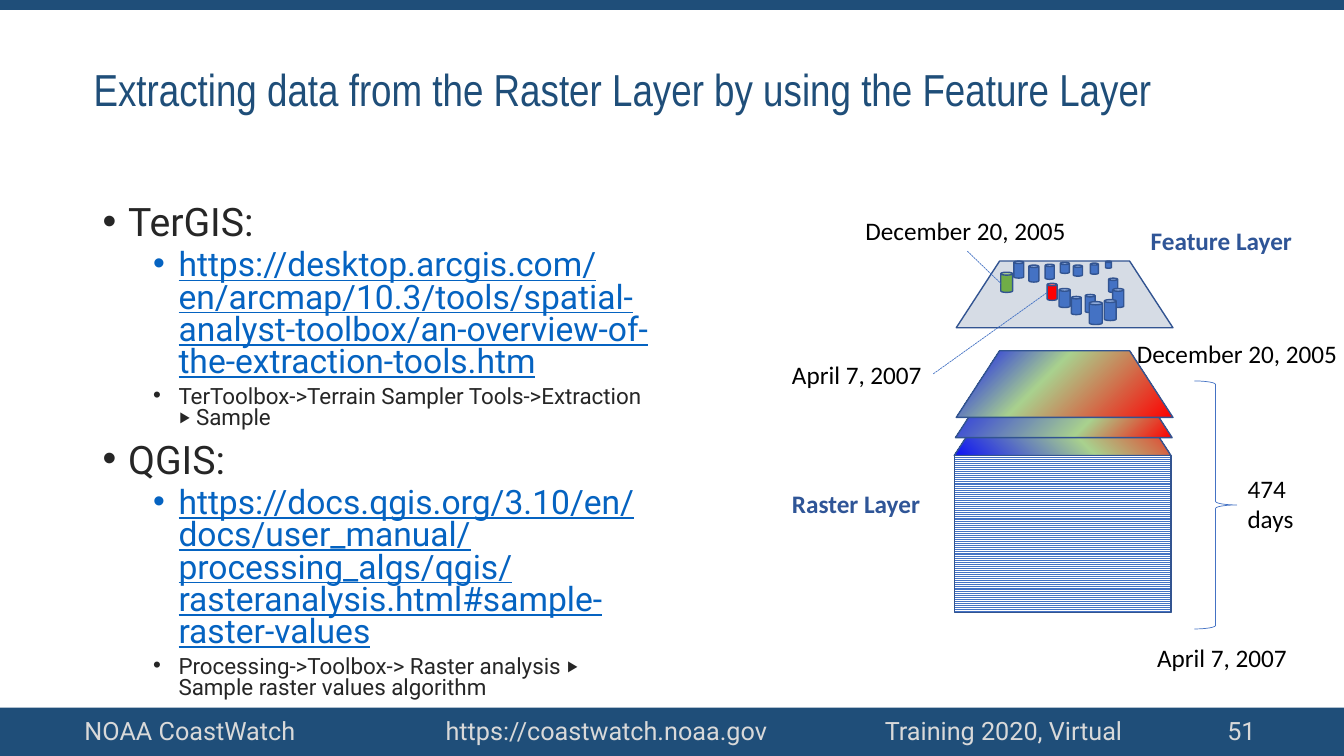
from lxml.etree import SubElement
from pptx import Presentation
from pptx.dml.color import RGBColor
from pptx.enum.dml import MSO_LINE, MSO_PATTERN
from pptx.enum.shapes import MSO_CONNECTOR, MSO_SHAPE
from pptx.enum.text import MSO_ANCHOR, MSO_AUTO_SIZE
from pptx.oxml import parse_xml
from pptx.oxml.ns import nsdecls, qn
from pptx.util import Cm, Pt

COLORS = {
    "navy": "1F4E79", "footer": "D9D9D9", "text": "262626", "link": "0563C1",
    "black": "000000", "white": "FFFFFF", "caption": "2F5597", "edge": "325491",
    "blue": "4472C4", "green": "70AD47", "red": "FF0000", "sheet": "D6DCE5",
    "deep": "0C12F6", "pale": "A9D18E",
}
SHEET_W, SHEET_H = 5.46, 1.68

# left, top, width, height inside the feature sheet, in cm
STATIONS = [
    (1.45, 0, 0.25, 0.43, "blue"), (1.12, 0.28, 0.3, 0.51, "green"),
    (1.83, 0.1, 0.25, 0.43, "blue"), (2.24, 0.08, 0.23, 0.38, "blue"),
    (2.62, 0.03, 0.23, 0.28, "blue"), (2.95, 0.1, 0.23, 0.28, "blue"),
    (3.38, 0.05, 0.2, 0.28, "blue"), (3.84, 0.43, 0.23, 0.36, "blue"),
    (3.76, 0, 0.15, 0.18, "blue"), (3.94, 0.69, 0.28, 0.48, "blue"),
    (3.73, 0.97, 0.3, 0.53, "blue"), (3.25, 0.84, 0.25, 0.46, "blue"),
    (2.9, 0.89, 0.25, 0.46, "blue"), (2.59, 0.69, 0.28, 0.48, "blue"),
    (2.29, 0.56, 0.25, 0.43, "red"), (3.35, 1.02, 0.33, 0.58, "blue"),
]
# left, top, middle stop in %, focus rectangle; from the back to the front
RASTERS = [
    (0, 0.96, 50, {"t": "100000", "r": "100000"}),
    (0.03, 0.51, 65, {"r": "100000", "b": "100000"}),
    (0.05, 0, 41, {"r": "100000", "b": "100000"}),
]
# level, size, colour, text
OUTLINE = [
    (0, 28, "text", "TerGIS:"),
    (1, 24, "link", "https://desktop.arcgis.com/en/arcmap/10.3/tools/spatial-analyst-toolbox/"
                    "an-overview-of-the-extraction-tools.htm"),
    (1, 16, "text", "TerToolbox->Terrain Sampler Tools->Extraction ‣ Sample"),
    (0, 28, "text", "QGIS:"),
    (1, 24, "link", "https://docs.qgis.org/3.10/en/docs/user_manual/processing_algs/qgis/"
                    "rasteranalysis.html#sample-raster-values"),
    (1, 16, "text", "Processing->Toolbox-> Raster analysis ‣ Sample raster values algorithm"),
]


def rgb(name):
    return RGBColor.from_string(COLORS[name])


def add_run(p, text, size, font, color, bold=False, underline=False):
    r = p.add_run()
    r.text = text
    r.font.size, r.font.name = Pt(size), font
    r.font.bold, r.font.underline = bold, underline
    r.font.color.rgb = rgb(color)


def add_shape(shapes, kind, x, y, w, h, fill=None, line=None, weight=1):
    sp = shapes.add_shape(kind, Cm(x), Cm(y), Cm(w), Cm(h))
    sp.shadow.inherit = False
    if fill:
        sp.fill.solid()
        sp.fill.fore_color.rgb = rgb(fill)
    else:
        sp.fill.background()
    if line:
        sp.line.color.rgb = rgb(line)
        sp.line.width = Pt(weight)
    else:
        sp.line.fill.background()
    return sp


def flip(sp, axis):
    sp.element.spPr.find(qn("a:xfrm")).set(axis, "1")


def add_sheet(shapes, x, y, fill):
    """A trapezoid that is narrow at the top."""
    sp = add_shape(shapes, MSO_SHAPE.FLOWCHART_MANUAL_OPERATION,
                   x, y, SHEET_W, SHEET_H, fill, "edge")
    flip(sp, "flipV")
    return sp


def fill_radial(sp, middle, focus):
    """Blue to green to red, spreading from the focus corner."""
    grad = parse_xml(f'<a:gradFill {nsdecls("a")} rotWithShape="1"/>')
    stops = SubElement(grad, qn("a:gsLst"))
    for pos, color in ((0, "deep"), (middle, "pale"), (100, "red")):
        gs = SubElement(stops, qn("a:gs"), pos=str(pos * 1000))
        SubElement(gs, qn("a:srgbClr"), val=COLORS[color])
    circle = SubElement(grad, qn("a:path"), path="circle")
    SubElement(circle, qn("a:fillToRect"), **focus)
    old = sp.element.spPr.find(qn("a:solidFill"))
    sp.element.spPr.replace(old, grad)


def add_label(s, x, y, w, text, color="black", bold=False, h=1.02, wrap=False):
    tb = s.shapes.add_textbox(Cm(x), Cm(y), Cm(w), Cm(h))
    tf = tb.text_frame
    tf.word_wrap = wrap
    tf.auto_size = MSO_AUTO_SIZE.SHAPE_TO_FIT_TEXT
    add_run(tf.paragraphs[0], text, 18, "Calibri", color, bold)


def add_leader(s, x1, y1, x2, y2):
    cn = s.shapes.add_connector(MSO_CONNECTOR.STRAIGHT, Cm(x1), Cm(y1), Cm(x2), Cm(y2))
    cn.line.color.rgb = rgb("blue")
    cn.line.width = Pt(0.5)
    cn.line.dash_style = MSO_LINE.SQUARE_DOT
    SubElement(cn.element.spPr, qn("a:effectLst"))


def add_footer(s, x, y, w, h):
    sp = add_shape(s.shapes, MSO_SHAPE.RECTANGLE, x, y, w, h, "navy")
    tf = sp.text_frame
    tf.margin_left = Cm(2.13)
    tf.vertical_anchor = MSO_ANCHOR.MIDDLE
    p = tf.paragraphs[0]
    p.line_spacing = 0.93
    pPr = p._p.get_or_add_pPr()
    pPr.set("algn", "l")
    tabs = SubElement(pPr, qn("a:tabLst"))
    for stop in (9.1, 20.17, 28.8):
        SubElement(tabs, qn("a:tab"), pos=str(Cm(stop)), algn="l")
    items = ("NOAA CoastWatch", "https://coastwatch.noaa.gov", "Training 2020, Virtual", "51")
    add_run(p, "\t".join(items), 18, "Roboto", "footer")


def add_title(s, x, y, w, h):
    tf = s.shapes.add_textbox(Cm(x), Cm(y), Cm(w), Cm(h)).text_frame
    tf.word_wrap = True
    tf.vertical_anchor = MSO_ANCHOR.MIDDLE
    p = tf.paragraphs[0]
    p.line_spacing = 0.9
    add_run(p, "Extracting data from the Raster Layer by using the Feature Layer",
            32, "Arial Narrow", "navy")


def add_outline(s, x, y, w, h):
    tf = s.shapes.add_textbox(Cm(x), Cm(y), Cm(w), Cm(h)).text_frame
    tf.word_wrap = True
    for i, (level, size, color, text) in enumerate(OUTLINE):
        p = tf.add_paragraph() if i else tf.paragraphs[0]
        p.level = level
        p.line_spacing = 0.8
        if i:
            p.space_before = Pt(5 if level else 10)
        pPr = p._p.get_or_add_pPr()
        pPr.set("marL", str(Cm(1.91 if level else 0.64)))
        pPr.set("indent", str(Cm(-0.64)))
        SubElement(pPr, qn("a:buFont"), typeface="Arial")
        SubElement(pPr, qn("a:buChar"), char="•")
        add_run(p, text, size, "Roboto", color, underline=color == "link")


def add_raster_layer(s, x, y):
    for dx, dy, middle, focus in RASTERS:
        fill_radial(add_sheet(s.shapes, x + dx, y + dy, "pale"), middle, focus)
    stack = add_shape(s.shapes, MSO_SHAPE.RECTANGLE, x, y + 2.64, SHEET_W, 3.96, line="edge")
    stack.fill.patterned()
    stack.fill.pattern = MSO_PATTERN.LIGHT_HORIZONTAL
    stack.fill.fore_color.rgb = rgb("blue")
    stack.fill.back_color.rgb = rgb("white")
    brace = add_shape(s.shapes, MSO_SHAPE.LEFT_BRACE, x + 6.05, y + 0.76, 1.07, 6.25,
                      line="blue", weight=0.5)
    flip(brace, "flipH")
    add_label(s, x + 7.14, y + 2.95, 2.06, "474 days", h=1.8, wrap=True)
    add_label(s, x + 4.35, y - 0.43, 5.61, "December 20, 2005")
    add_label(s, x + 4.86, y + 7.21, 3.81, "April 7, 2007")
    add_label(s, x - 4.34, y + 3.33, 3.76, "Raster Layer", "caption", True)


def add_feature_layer(s, x, y):
    group = s.shapes.add_group_shape()
    add_sheet(group.shapes, x, y, "sheet")
    for dx, dy, w, h, color in STATIONS:
        add_shape(group.shapes, MSO_SHAPE.CAN, x + dx, y + dy, w, h, color, "edge")
    add_label(s, x - 2.54, y - 1.27, 5.61, "December 20, 2005")
    add_label(s, x - 4.39, y + 2.34, 3.81, "April 7, 2007")
    add_label(s, x + 4.65, y - 1.02, 4.09, "Feature Layer", "caption", True)
    add_leader(s, x + 0.28, y - 0.25, x + 1.12, y + 0.56)
    add_leader(s, x - 0.58, y + 2.84, x + 2.29, y + 0.79)


def main():
    prs = Presentation()
    prs.slide_width, prs.slide_height = Cm(33.87), Cm(19.05)
    s = prs.slides.add_slide(prs.slide_layouts[6])
    add_footer(s, 0, 17.83, 33.87, 1.22)
    add_shape(s.shapes, MSO_SHAPE.RECTANGLE, 0, 0, 33.87, 0.25, "navy")
    add_outline(s, 2.34, 5.08, 14.4, 12.09)
    add_raster_layer(s, 24.05, 8.84)
    add_feature_layer(s, 24.1, 6.58)
    add_title(s, 2.11, 0.48, 29.21, 3.68)
    prs.save("out.pptx")


if __name__ == "__main__":
    main()
